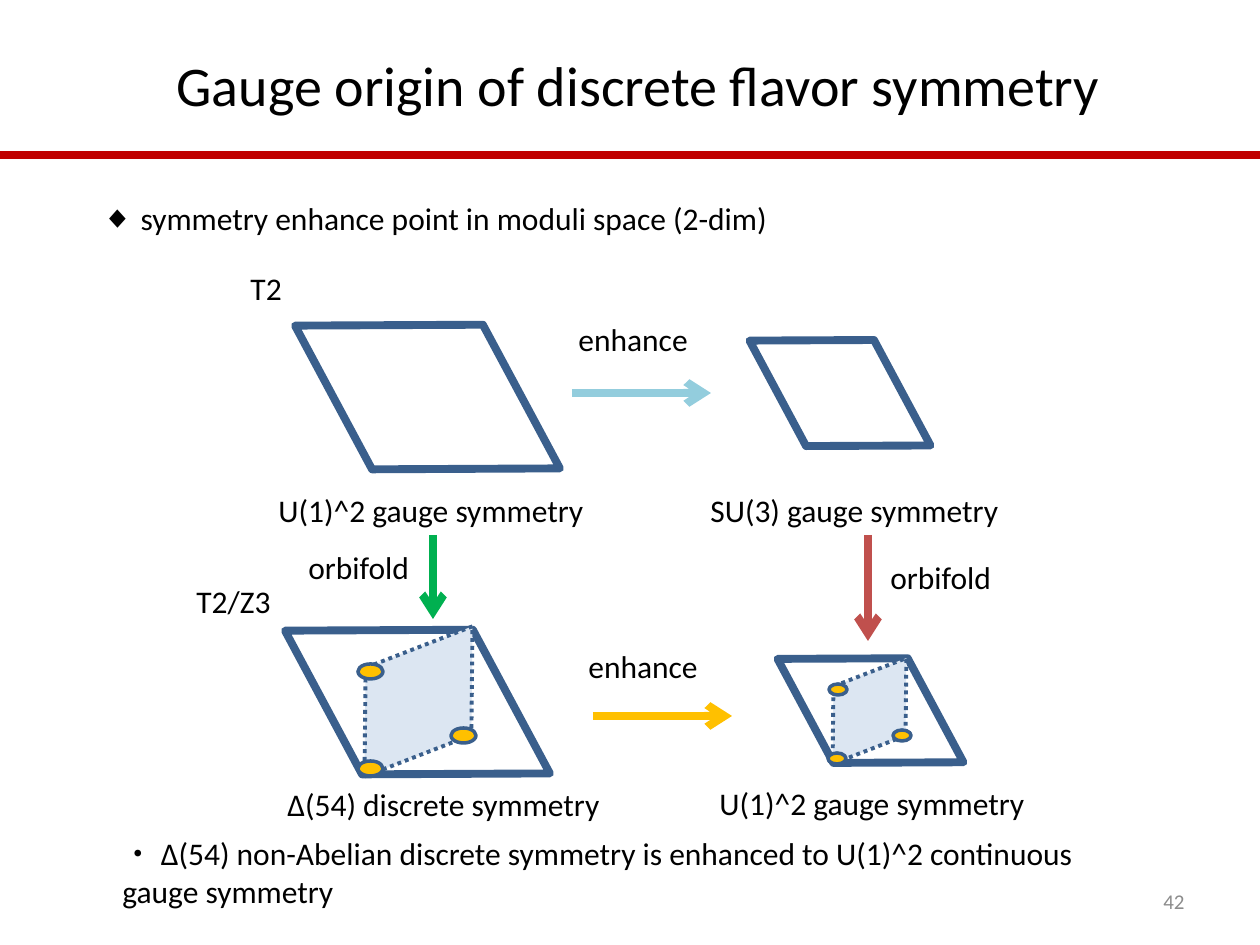
from dataclasses import dataclass

from lxml.etree import SubElement
from pptx import Presentation
from pptx.dml.color import RGBColor
from pptx.enum.dml import MSO_LINE
from pptx.enum.shapes import MSO_CONNECTOR, MSO_SHAPE
from pptx.enum.text import MSO_ANCHOR, MSO_AUTO_SIZE, PP_ALIGN
from pptx.oxml.ns import qn
from pptx.util import Emu, Pt


@dataclass(frozen=True)
class Theme:
    font: str = "Calibri"
    title_size: int = 32
    text_size: int = 18
    number_size: int = 12
    heavy: float = 4.5
    dotted: float = 2.25
    thin: float = 2
    text: str = "000000"
    muted: str = "8C8C8C"
    rule: str = "C00000"
    outline: str = "3A5F8C"
    cell: str = "DCE6F2"
    gold: str = "FFC000"
    green: str = "00B050"
    red: str = "C0504D"
    sky: str = "93CDDD"


def px(value):
    return Emu(round(value * 914400 / 126))


class SlideBuilder:
    def __init__(self, page, theme):
        self.page = page
        self.theme = theme

    def place(self, shape, left, top, width, height):
        shape.left, shape.top = px(left), px(top)
        shape.width, shape.height = px(width), px(height)

    def fill_text(self, box, text, size, color=None, align=PP_ALIGN.LEFT, wrap=True):
        frame = box.text_frame
        frame.text = text
        frame.word_wrap = wrap
        frame.auto_size = MSO_AUTO_SIZE.NONE if wrap else MSO_AUTO_SIZE.SHAPE_TO_FIT_TEXT
        para = frame.paragraphs[0]
        para.alignment = align
        para.space_before = Pt(0)
        for span in para.runs:
            span.font.name = self.theme.font
            span.font.size = Pt(size)
            span.font.color.rgb = RGBColor.from_string(color or self.theme.text)
        return para

    def title(self, text, *frame):
        box = self.page.shapes.title
        self.place(box, *frame)
        self.fill_text(box, text, self.theme.title_size)

    def bullet(self, text, mark, indent, *frame):
        box = self.page.placeholders[1]
        self.place(box, *frame)
        properties = self.fill_text(box, text, self.theme.text_size)._p.get_or_add_pPr()
        properties.set("marL", str(px(indent)))
        properties.set("indent", str(-px(indent)))
        SubElement(properties, qn("a:buFont"), typeface="Arial")
        SubElement(properties, qn("a:buChar"), char=mark)

    def label(self, text, left, top, width, height=50, wrap=False):
        box = self.page.shapes.add_textbox(px(left), px(top), px(width), px(height))
        self.fill_text(box, text, self.theme.text_size, wrap=wrap)
        return box

    def number(self, text, *frame):
        box = self.page.shapes.add_textbox(*map(px, frame))
        box.text_frame.vertical_anchor = MSO_ANCHOR.MIDDLE
        self.fill_text(box, text, self.theme.number_size, self.theme.muted, PP_ALIGN.RIGHT)

    def line(self, start, end, color, arrow=True, source=None):
        link = self.page.shapes.add_connector(
            MSO_CONNECTOR.STRAIGHT, *map(px, start + end))
        if source is not None:
            link.begin_connect(source, 2)
        link.line.color.rgb = RGBColor.from_string(color)
        link.line.width = Pt(self.theme.heavy)
        properties = link._element.spPr
        if arrow:
            SubElement(properties.find(qn("a:ln")), qn("a:tailEnd"), type="arrow")
        SubElement(properties, qn("a:effectLst"))

    def shape(self, parent, kind, frame, weight, fill=None):
        item = parent.shapes.add_shape(kind, *map(px, frame))
        item.shadow.inherit = False
        if fill:
            item.fill.solid()
            item.fill.fore_color.rgb = RGBColor.from_string(fill)
        else:
            item.fill.background()
        item.line.color.rgb = RGBColor.from_string(self.theme.outline)
        item.line.width = Pt(weight)
        return item

    def torus(self, *frame, parent=None):
        item = self.shape(parent or self.page, MSO_SHAPE.PARALLELOGRAM, frame, self.theme.heavy)
        item.adjustments[0] = 0.53
        item.rotation = 241.8

    def orbifold(self, outline, cell, point_size, points):
        group = self.page.shapes.add_group_shape()
        self.torus(*outline, parent=group)
        domain = self.shape(group, MSO_SHAPE.PARALLELOGRAM, cell,
                            self.theme.dotted, self.theme.cell)
        domain.adjustments[0] = 0.4
        domain.rotation = 338.8
        domain.line.dash_style = MSO_LINE.ROUND_DOT
        for point in points:
            self.shape(group, MSO_SHAPE.OVAL, point + point_size,
                       self.theme.thin, self.theme.gold)


def main():
    deck = Presentation()
    deck.slide_width, deck.slide_height = px(1260), px(945)
    theme = Theme()
    slide = SlideBuilder(deck.slides.add_slide(deck.slide_layouts[1]), theme)

    slide.title("Gauge origin of discrete flavor symmetry", 164, 44, 959, 81)
    slide.line((0, 155), (1260, 155), theme.rule, arrow=False)
    slide.number("42", 903, 876, 294, 50)
    slide.bullet("symmetry enhance point in moduli space (2-dim)", "◆", 39, 89, 193, 699, 50)
    slide.label("・ Δ(54) non-Abelian discrete symmetry is enhanced to U(1)^2 "
                "continuous gauge symmetry", 110, 828, 1013, 89, wrap=True)

    slide.label("T2", 238, 263, 57)
    torus_label = slide.label("U(1)^2 gauge symmetry", 266, 485, 334)
    slide.label("SU(3) gauge symmetry", 698, 485, 316)
    slide.label("T2/Z3", 184, 576, 101)
    slide.label("U(1)^2 gauge symmetry", 707, 778, 334)
    slide.label("Δ(54) discrete symmetry", 275, 779, 341)

    slide.torus(302, 314, 251, 166)
    slide.torus(751, 338, 178, 110)
    slide.orbifold((292, 619, 251, 166), (341, 651, 155, 101),
                   (25, 15), [(358, 664), (358, 761), (451, 728)])
    slide.orbifold((781, 653, 179, 115), (816, 675, 107, 72),
                   (18, 11), [(829, 684), (828, 753), (893, 730)])

    slide.line((433, 535), (433, 619), theme.green, source=torus_label)
    slide.line((868, 535), (868, 641), theme.red)
    slide.line((572, 393), (711, 393), theme.sky)
    slide.line((593, 716), (732, 716), theme.gold)

    slide.label("enhance", 566, 314, 135)
    slide.label("enhance", 576, 641, 135)
    slide.label("orbifold", 296, 542, 126)
    slide.label("orbifold", 878, 552, 126)

    deck.save("out.pptx")


if __name__ == "__main__":
    main()
